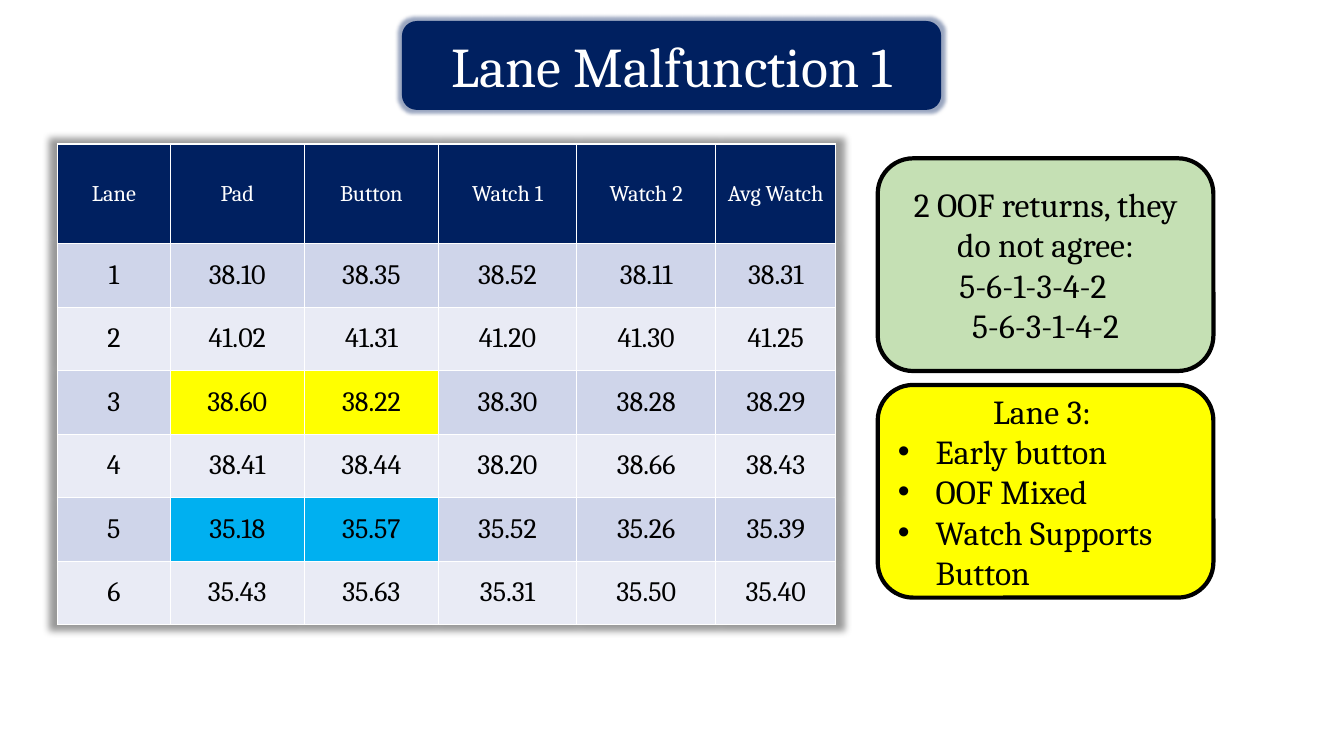
import pptx
import pptx.dml.color
import pptx.enum.shapes
import pptx.enum.text
import pptx.oxml
import pptx.oxml.ns
import pptx.util

Cm = pptx.util.Cm
ALIGN = pptx.enum.text.PP_ALIGN
MIDDLE = pptx.enum.text.MSO_ANCHOR.MIDDLE
FONT = "Cambria"
COLORS = {
    "navy": "002060", "white": "FFFFFF", "black": "000000",
    "band_dark": "CFD5EA", "band_light": "E9EBF5",
    "yellow": "FFFF00", "blue": "00B0F0", "green": "C5E0B4",
}

HEADINGS = ["Lane", "Pad", "Button", "Watch 1", "Watch 2", "Avg Watch"]
LANE_TIMES = [
    ["38.10", "38.35", "38.52", "38.11", "38.31"],
    ["41.02", "41.31", "41.20", "41.30", "41.25"],
    ["38.60", "38.22", "38.30", "38.28", "38.29"],
    ["38.41", "38.44", "38.20", "38.66", "38.43"],
    ["35.18", "35.57", "35.52", "35.26", "35.39"],
    ["35.43", "35.63", "35.31", "35.50", "35.40"],
]
FLAGGED_LANES = {3: "yellow", 5: "blue"}
FLAGGED_HEADINGS = ("Pad", "Button")
COLUMN_WIDTHS = [2.84, 3.38, 3.38, 3.48, 3.51, 3.02]
HEADER_HEIGHT = 2.51


def rgb(color):
    return pptx.dml.color.RGBColor.from_string(COLORS[color])


def effect_list(effect):
    ns = pptx.oxml.ns.nsdecls("a")
    return pptx.oxml.parse_xml(f"<a:effectLst {ns}>{effect}</a:effectLst>")


def add_text(paragraph, text, size, color, align=ALIGN.CENTER):
    paragraph.alignment = align
    run = paragraph.add_run()
    run.text = text
    run.font.name = FONT
    run.font.size = pptx.util.Pt(size)
    run.font.bold = False
    run.font.color.rgb = rgb(color)


def indent(paragraph, left, first=0):
    properties = paragraph._p.get_or_add_pPr()
    properties.set("marL", str(Cm(left)))
    properties.set("indent", str(Cm(first)))
    return properties


def add_panel(slide, box, fill):
    panel = slide.shapes.add_shape(
        pptx.enum.shapes.MSO_SHAPE.ROUNDED_RECTANGLE, *map(Cm, box))
    panel.shadow.inherit = False
    panel.fill.solid()
    panel.fill.fore_color.rgb = rgb(fill)
    panel.text_frame.word_wrap = True
    panel.text_frame.vertical_anchor = MIDDLE
    return panel


# Title with a soft navy glow
def add_title(slide, box):
    title = add_panel(slide, box, "navy")
    title.line.fill.background()
    properties = title._element.spPr
    properties.remove(properties.find(pptx.oxml.ns.qn("a:effectLst")))
    properties.append(effect_list(
        f'<a:glow rad="63500"><a:srgbClr val="{COLORS["navy"]}">'
        '<a:alpha val="40000"/></a:srgbClr></a:glow>'))
    add_text(title.text_frame.paragraphs[0], "Lane Malfunction 1", 40, "white")


# Table of lane times
def add_times(slide, box):
    rows = [HEADINGS] + [[str(lane), *times]
                         for lane, times in enumerate(LANE_TIMES, 1)]
    table = slide.shapes.add_table(len(rows), len(HEADINGS), *map(Cm, box)).table
    for column, width in zip(table.columns, COLUMN_WIDTHS):
        column.width = Cm(width)
    for lane, row in enumerate(table.rows):
        row.height = Cm((box[3] - HEADER_HEIGHT) / len(LANE_TIMES)
                        if lane else HEADER_HEIGHT)
    table._tbl.tblPr.insert(0, effect_list(
        '<a:outerShdw blurRad="63500" sx="102000" sy="102000" algn="ctr" '
        f'rotWithShape="0"><a:srgbClr val="{COLORS["black"]}">'
        '<a:alpha val="40000"/></a:srgbClr></a:outerShdw>'))

    for lane, values in enumerate(rows):
        band = "band_dark" if lane % 2 else "band_light"
        for index, (heading, value) in enumerate(zip(HEADINGS, values)):
            if lane == 0:
                fill, size, color = "navy", 16, "white"
            else:
                flagged = heading in FLAGGED_HEADINGS
                fill = FLAGGED_LANES.get(lane, band) if flagged else band
                size, color = 20, "black"
            cell = table.cell(lane, index)
            cell.vertical_anchor = MIDDLE
            cell.fill.solid()
            cell.fill.fore_color.rgb = rgb(fill)
            add_text(cell.text_frame.paragraphs[0], value, size, color)


def add_note(slide, box, fill, heading):
    note = add_panel(slide, box, fill)
    note.line.color.rgb = rgb("black")
    note.line.width = pptx.util.Pt(3)
    add_text(note.text_frame.paragraphs[0], heading, 24, "black")
    return note.text_frame


# Orders of finish
def add_finish_orders(slide, box):
    orders = add_note(slide, box, "green", "2 OOF returns, they do not agree:")
    first = orders.add_paragraph()
    indent(first, 1.55)
    add_text(first, "5-6-1-3-4-2", 24, "black", ALIGN.LEFT)
    add_text(orders.add_paragraph(), "5-6-3-1-4-2", 24, "black")


# Findings for the flagged lane
def add_findings(slide, box):
    findings = add_note(slide, box, "yellow", "Lane 3: ")
    for finding in ["Early button", "OOF Mixed", "Watch Supports Button"]:
        paragraph = findings.add_paragraph()
        properties = indent(paragraph, 0.95, -0.95)
        ns = pptx.oxml.ns.nsdecls("a")
        properties.append(pptx.oxml.parse_xml(f'<a:buFont {ns} typeface="Arial"/>'))
        properties.append(pptx.oxml.parse_xml(f'<a:buChar {ns} char="•"/>'))
        add_text(paragraph, finding, 24, "black", ALIGN.LEFT)


def main():
    deck = pptx.Presentation()
    deck.slide_width, deck.slide_height = Cm(33.87), Cm(19.05)
    slide = deck.slides.add_slide(deck.slide_layouts[6])
    add_times(slide, (1.45, 3.63, sum(COLUMN_WIDTHS), 12.11))
    left, top, width, height, gap = 22.12, 3.99, 8.46, 5.36, 0.35
    add_findings(slide, (left, top + height + gap, width, height))
    add_finish_orders(slide, (left, top, width, height))
    add_title(slide, (10.13, 0.53, 13.59, 2.24))
    deck.save("out.pptx")


if __name__ == "__main__":
    main()
